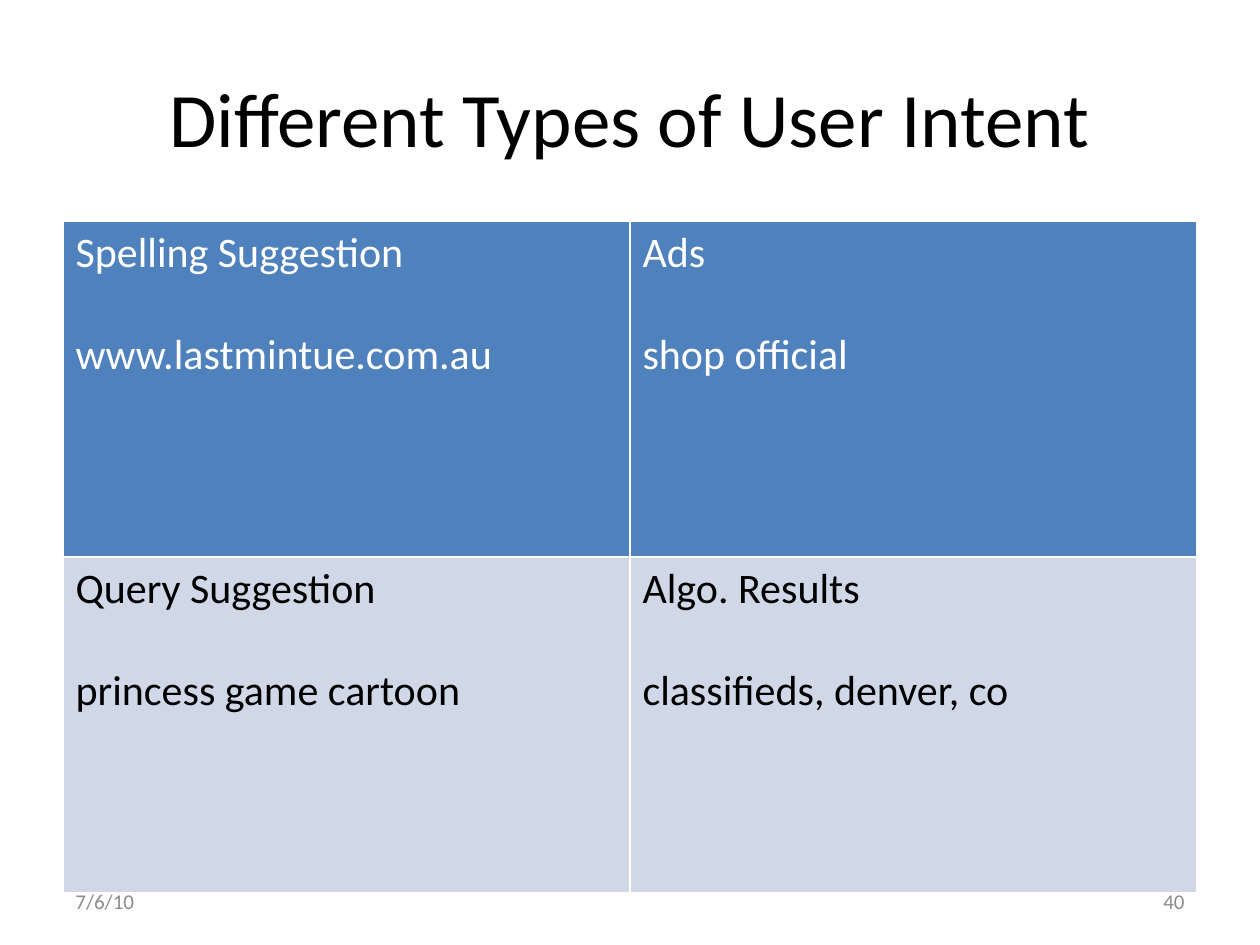
from dataclasses import dataclass

from lxml import etree
from pptx import Presentation
from pptx.dml.color import RGBColor
from pptx.enum.text import MSO_ANCHOR, PP_ALIGN
from pptx.oxml.ns import qn
from pptx.util import Pt

LEFT, CENTER, RIGHT = PP_ALIGN.LEFT, PP_ALIGN.CENTER, PP_ALIGN.RIGHT
MIDDLE = MSO_ANCHOR.MIDDLE
SCALE = 914400 // 126


@dataclass(frozen=True)
class Theme:
    font: str = "Calibri"
    black: str = "000000"
    white: str = "FFFFFF"
    gray: str = "8C8C8C"
    head: str = "4F81BD"
    body: str = "D0D8E8"
    title: int = 44
    cell: int = 24
    foot: int = 12
    gap: int = 29
    rule: int = 1


THEME = Theme()

INTENTS = [
    [("Spelling Suggestion", "www.lastmintue.com.au"),
     ("Ads", "shop official")],
    [("Query Suggestion", "princess game cartoon"),
     ("Algo. Results", "classifieds, denver, co")],
]


def px(n):
    return n * SCALE


def style(para, size, color, align=LEFT):
    para.alignment = align
    font = para.font
    font.name, font.size = THEME.font, Pt(size)
    font.color.rgb = RGBColor.from_string(color)


def add_text(slide, text, box, size, color, align=LEFT):
    frame = slide.shapes.add_textbox(*map(px, box)).text_frame
    frame.word_wrap = True
    frame.vertical_anchor = MIDDLE
    frame.text = text
    style(frame.paragraphs[0], size, color, align)


def add_rules(cell):
    """Draw the cell's four borders; call before the fill is set."""
    props = cell._tc.get_or_add_tcPr()
    for side in ("lnL", "lnR", "lnT", "lnB"):
        line = etree.SubElement(props, qn(f"a:{side}"), w=str(Pt(THEME.rule)))
        fill = etree.SubElement(line, qn("a:solidFill"))
        etree.SubElement(fill, qn("a:srgbClr"), val=THEME.white)


def fill_cell(cell, pair, fill, color):
    add_rules(cell)
    cell.fill.solid()
    cell.fill.fore_color.rgb = RGBColor.from_string(fill)
    cell.text = "\n".join(pair)
    for para in cell.text_frame.paragraphs:
        style(para, THEME.cell, color)
    cell.text_frame.paragraphs[1].space_before = Pt(THEME.gap)


def add_grid(slide, rows, box):
    shape = slide.shapes.add_table(len(rows), len(rows[0]), *map(px, box))
    table = shape.table
    table.first_row = table.horz_banding = False
    looks = [(THEME.head, THEME.white), (THEME.body, THEME.black)]
    for r, (row, look) in enumerate(zip(rows, looks)):
        for c, pair in enumerate(row):
            fill_cell(table.cell(r, c), pair, *look)


def main():
    deck = Presentation()
    deck.slide_width, deck.slide_height = px(1260), px(945)
    slide = deck.slides.add_slide(deck.slide_layouts[6])
    add_text(slide, "Different Types of User Intent", (63, 38, 1134, 158),
             THEME.title, THEME.black, CENTER)
    add_grid(slide, INTENTS, (63, 221, 1134, 672))
    for text, left, align in (("7/6/10", 63, LEFT), ("40", 903, RIGHT)):
        add_text(slide, text, (left, 876, 294, 50),
                 THEME.foot, THEME.gray, align)
    deck.save("out.pptx")


if __name__ == "__main__":
    main()
